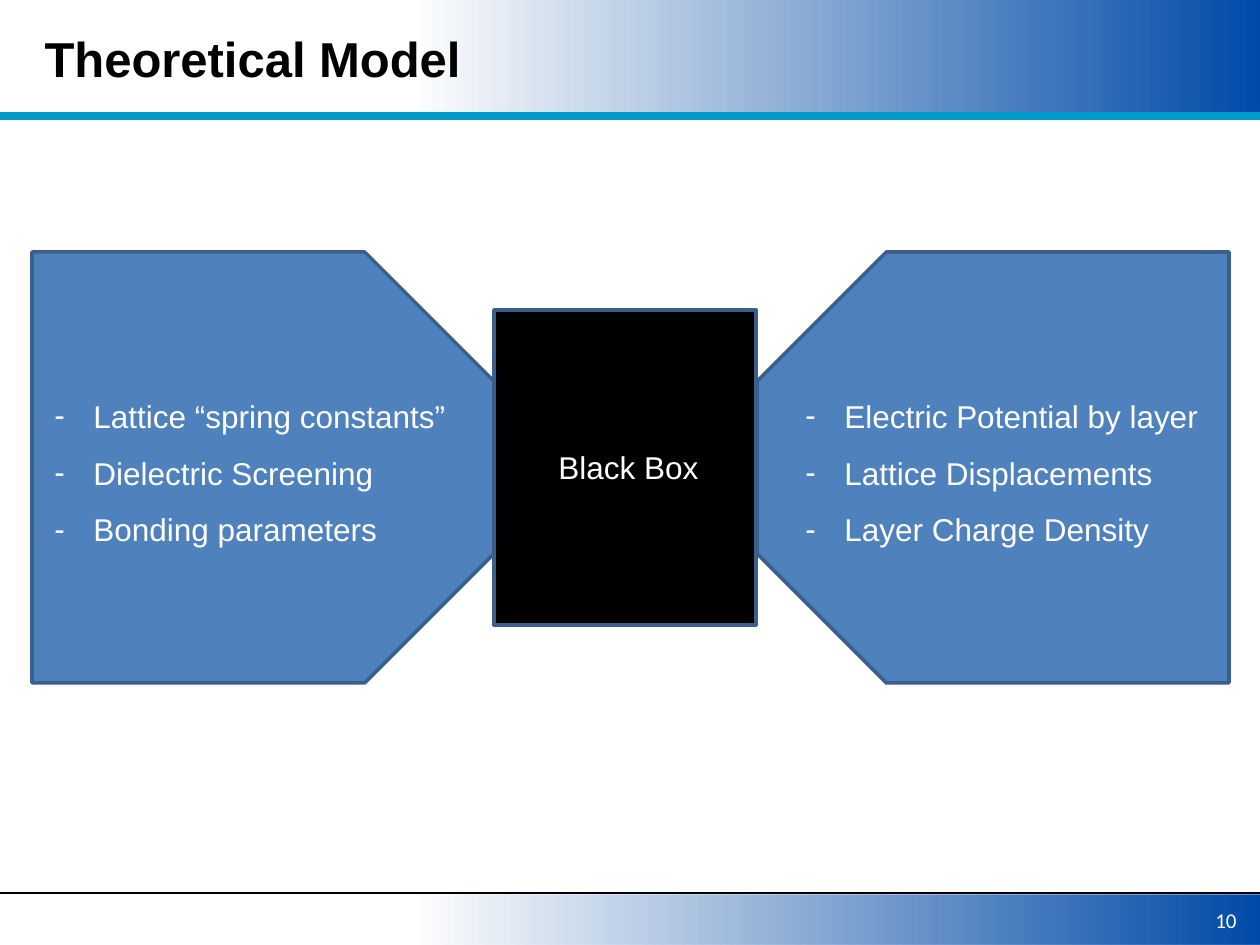
from dataclasses import dataclass

from lxml import etree
from pptx import Presentation
from pptx import util as u
from pptx.dml.color import RGBColor
from pptx.enum import shapes, text
from pptx.oxml.ns import qn

HEADING = "Theoretical Model"
PAGE = "10"
CORE = "Black Box"
INPUTS = ["Lattice “spring constants”", "Dielectric Screening", "Bonding parameters"]
OUTPUTS = ["Electric Potential by layer", "Lattice Displacements", "Layer Charge Density"]


@dataclass(frozen=True)
class Theme:
    font: str = "Arial"
    page_font: str = "Calibri"
    white: str = "FFFFFF"
    black: str = "000000"
    fade: str = "084CA1"
    band: str = "004BA9"
    rule: str = "009BC8"
    panel: str = "4F81BD"
    outline: str = "3A5F8C"
    heading_size: int = 28
    body_size: int = 18
    page_size: int = 12


THEME = Theme()
WIDTH, HEIGHT = 1260, 945
HEADER = (0, 0, WIDTH, 113)
FOOTER = (0, 895, WIDTH, 50)
BOX = (494, 310, 262, 315)
PANEL_TOP, PANEL_HEIGHT = 252, 431
LIST_TOP, LIST_HEIGHT, INDENT = 372, 242, 39
SIDES = [
    (INPUTS, (32, 462), 90, (42, 426)),
    (OUTPUTS, (757, 472), 270, (793, 431)),
]


def px(length):
    return u.Emu(round(length * 914400 / 126))


def place(area):
    return [px(length) for length in area]


def color(value):
    return RGBColor.from_string(value)


def write(holder, lines, size=THEME.body_size, font=THEME.font, ink=THEME.white, bold=False,
          align=text.PP_ALIGN.LEFT, anchor=text.MSO_ANCHOR.TOP, bullet=None, spacing=None):
    frame = holder.text_frame
    frame.word_wrap = True
    frame.auto_size = text.MSO_AUTO_SIZE.NONE
    frame.vertical_anchor = anchor
    for index, line in enumerate(lines):
        paragraph = frame.paragraphs[0] if index == 0 else frame.add_paragraph()
        paragraph.alignment = align
        if spacing:
            paragraph.line_spacing = spacing
        if bullet:
            properties = paragraph._p.get_or_add_pPr()
            properties.set("marL", str(px(INDENT)))
            properties.set("indent", str(-px(INDENT)))
            etree.SubElement(properties, qn("a:buFont"), typeface=THEME.font)
            etree.SubElement(properties, qn("a:buChar"), char=bullet)
        run = paragraph.add_run()
        run.text = line
        run.font.name = font
        run.font.size = u.Pt(size)
        run.font.bold = bold
        run.font.color.rgb = color(ink)


def add_block(slide, kind, area, fill=None):
    block = slide.shapes.add_shape(kind, *place(area))
    block.shadow.inherit = False
    if fill:
        block.fill.solid()
        block.fill.fore_color.rgb = color(fill)
        block.line.color.rgb = color(THEME.outline)
        block.line.width = u.Pt(2)
    return block


def add_band(slide, area, rule_y, rule_color, rule_width):
    band = add_block(slide, shapes.MSO_SHAPE.RECTANGLE, area)
    band.line.fill.background()
    band.fill.gradient()
    band.fill.gradient_angle = 0
    start, end = band.fill.gradient_stops
    start.position, end.position = 0.33, 1
    start.color.rgb, end.color.rgb = color(THEME.fade), color(THEME.band)
    faded = next(band._element.iter(qn("a:srgbClr")))
    etree.SubElement(faded, qn("a:alpha"), val="0")
    rule = slide.shapes.add_connector(
        shapes.MSO_CONNECTOR.STRAIGHT, *place((0, rule_y, WIDTH, rule_y)))
    rule.line.color.rgb = color(rule_color)
    rule.line.width = u.Pt(rule_width)
    etree.SubElement(rule._element.spPr, qn("a:effectLst"))


def add_panel(slide, left, width, rotation):
    shift = (width - PANEL_HEIGHT) / 2
    area = (left + shift, PANEL_TOP - shift, PANEL_HEIGHT, width)
    panel = add_block(slide, shapes.MSO_SHAPE.SNIP_2_SAME_RECTANGLE, area, THEME.panel)
    panel.adjustments[0] = 0.3
    panel.adjustments[1] = 0
    panel.rotation = rotation


def main():
    deck = Presentation()
    deck.slide_width, deck.slide_height = px(WIDTH), px(HEIGHT)
    slide = deck.slides.add_slide(deck.slide_layouts[5])
    add_band(slide, HEADER, 116, THEME.rule, 4.5)
    add_band(slide, FOOTER, 893, THEME.black, 0.75)

    heading = slide.shapes.title
    slide.shapes._spTree.append(heading._element)
    heading.left, heading.top, heading.width, heading.height = place((32, 0, 1197, 116))
    write(heading, [HEADING], size=THEME.heading_size, ink=THEME.black, bold=True,
          anchor=text.MSO_ANCHOR.MIDDLE)
    page = slide.shapes.add_textbox(*place((955, 895, 294, 50)))
    write(page, [PAGE], size=THEME.page_size, font=THEME.page_font,
          align=text.PP_ALIGN.RIGHT, anchor=text.MSO_ANCHOR.MIDDLE)

    add_block(slide, shapes.MSO_SHAPE.RECTANGLE, BOX, THEME.black)
    for items, (left, width), rotation, (list_left, list_width) in SIDES:
        add_panel(slide, left, width, rotation)
        points = slide.shapes.add_textbox(
            *place((list_left, LIST_TOP, list_width, LIST_HEIGHT)))
        write(points, items, bullet="-", spacing=1.5)
    core = slide.shapes.add_textbox(*place((546, 442, 199, 50)))
    write(core, [CORE])
    deck.save("out.pptx")


if __name__ == "__main__":
    main()
